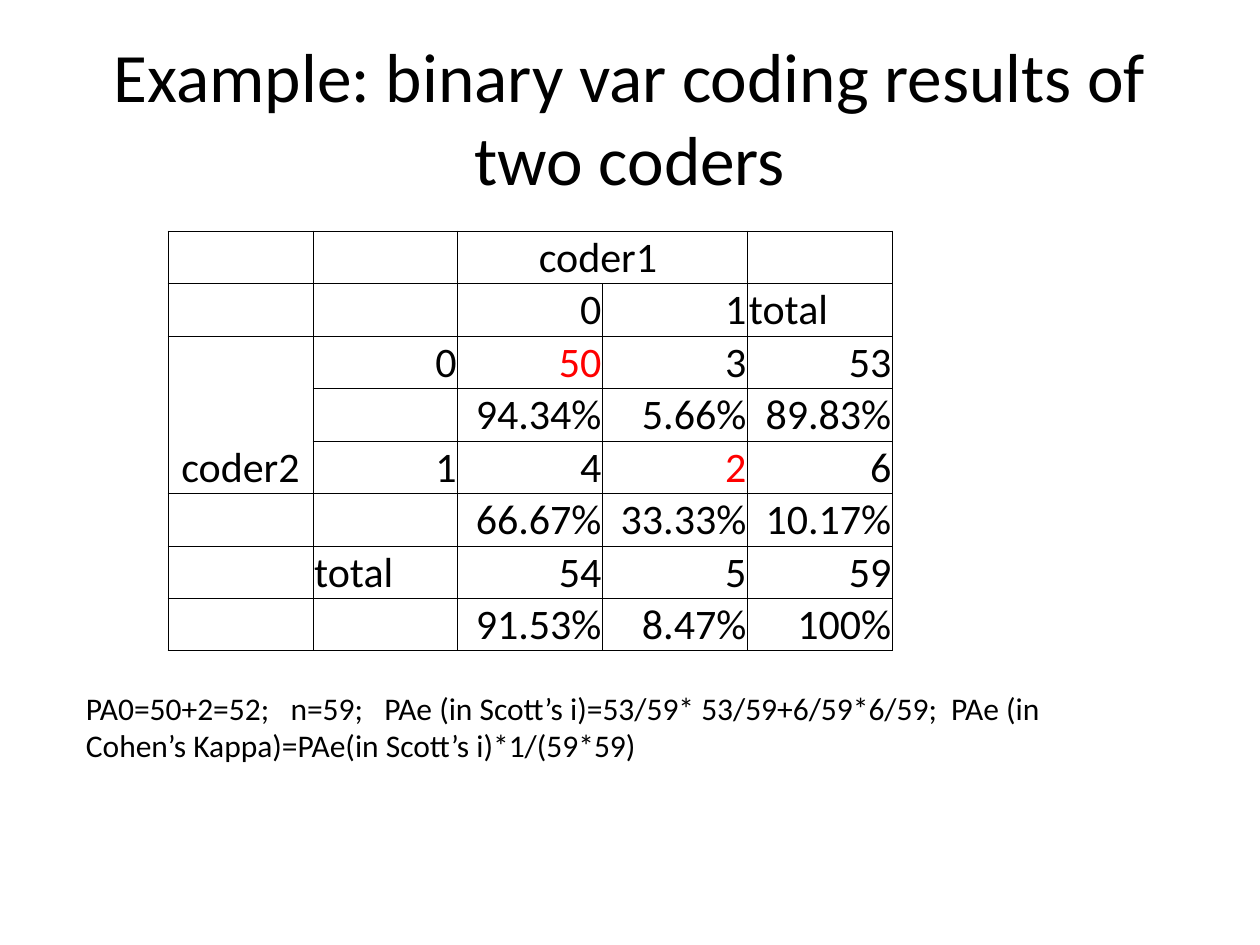
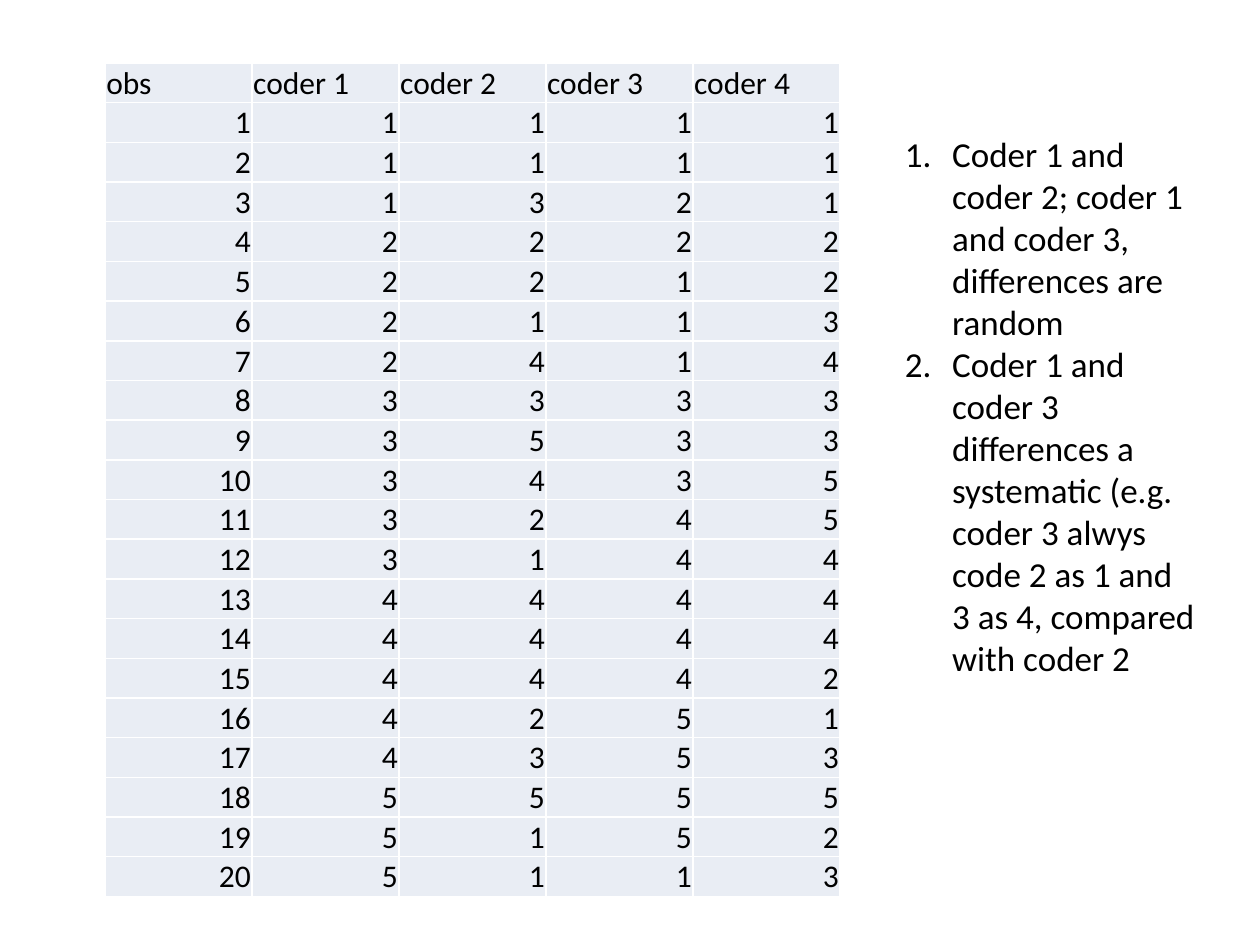
from dataclasses import dataclass

from lxml import etree
from pptx import Presentation
from pptx.dml.color import RGBColor
from pptx.enum.text import MSO_ANCHOR, PP_ALIGN
from pptx.oxml.ns import qn
from pptx.util import Pt

LEFT, CENTER, RIGHT = PP_ALIGN.LEFT, PP_ALIGN.CENTER, PP_ALIGN.RIGHT
TOP, MIDDLE, BOTTOM = MSO_ANCHOR.TOP, MSO_ANCHOR.MIDDLE, MSO_ANCHOR.BOTTOM


@dataclass(frozen=True)
class Theme:
    font: str = "Calibri"
    ink: str = "000000"
    agreement: str = "FF0000"
    paper: str = "FFFFFF"
    pale: str = "E9EDF4"
    title: float = 39.6
    crosstab: float = 24
    findings: float = 20
    body: float = 18


THEME = Theme()

TITLE = "Example: binary var coding results of two coders"
CROSSTAB = [
    ("", "", "coder1 ", "", ""),
    ("", "", "0", "1", "total"),
    ("coder2", "0", "50", "3", "53"),
    ("", "", "94.34%", "5.66%", "89.83%"),
    ("", "1", "4", "2", "6"),
    ("", "", "66.67%", "33.33%", "10.17%"),
    ("", "total", "54", "5", "59"),
    ("", "", "91.53%", "8.47%", "100%"),
]
CODER_SPANS = {(0, 2): (0, 3), (2, 0): (4, 0)}
AGREEMENTS = {(2, 2), (4, 3)}
FORMULAS = (
    "PA0=50+2=52;   n=59;   PAe (in Scott’s i)=53/59* 53/59+6/59*6/59;  "
    "PAe (in Cohen’s Kappa)=PAe(in Scott’s i)*1/(59*59)"
)

CODINGS = {
    "coder 1": (1, 1, 1, 2, 2, 2, 2, 3, 3, 3, 3, 3, 4, 4, 4, 4, 4, 5, 5, 5),
    "coder 2": (1, 1, 3, 2, 2, 1, 4, 3, 5, 4, 2, 1, 4, 4, 4, 2, 3, 5, 1, 1),
    "coder 3": (1, 1, 2, 2, 1, 1, 1, 3, 3, 3, 4, 4, 4, 4, 4, 5, 5, 5, 5, 1),
    "coder 4": (1, 1, 1, 2, 2, 3, 4, 3, 3, 5, 5, 4, 4, 4, 2, 1, 3, 5, 2, 3),
}
FINDINGS = [
    "Coder 1 and coder 2; coder 1 and coder 3, differences are random",
    "Coder 1 and coder 3 differences a systematic (e.g. coder 3 alwys code 2 "
    "as 1 and 3 as 4, compared with coder 2",
]


def style(paragraph, size, color=THEME.ink, align=LEFT):
    paragraph.alignment = align
    paragraph.font.name = THEME.font
    paragraph.font.size = Pt(size)
    paragraph.font.color.rgb = RGBColor.from_string(color)


def number(paragraph, indent):
    properties = paragraph._p.get_or_add_pPr()
    properties.set("marL", str(Pt(indent)))
    properties.set("indent", str(-Pt(indent)))
    numbering = etree.Element(qn("a:buAutoNum"), type="arabicPeriod")
    properties.insert(0, numbering)


def add_text(slide, box, lines, size, align=LEFT, anchor=TOP, indent=0):
    frame = slide.shapes.add_textbox(*map(Pt, box)).text_frame
    frame.word_wrap = True
    frame.vertical_anchor = anchor
    for index, line in enumerate(lines):
        paragraph = frame.add_paragraph() if index else frame.paragraphs[0]
        paragraph.text = line
        style(paragraph, size, align=align)
        if indent:
            number(paragraph, indent)


def add_borders(cell, color, width):
    properties = cell._tc.get_or_add_tcPr()
    for side in ("lnL", "lnR", "lnT", "lnB"):
        line = etree.SubElement(properties, qn(f"a:{side}"), w=str(Pt(width)))
        fill = etree.SubElement(line, qn("a:solidFill"))
        etree.SubElement(fill, qn("a:srgbClr"), val=color)


def add_grid(slide, rows, corner, cell_size, size, border, fill=None,
             spans=None, highlights=()):
    spans = spans or {}
    width, height = cell_size
    extent = (width * len(rows[0]), height * len(rows))
    grid = slide.shapes.add_table(
        len(rows), len(rows[0]), *map(Pt, corner + extent)).table
    grid.first_row = grid.horz_banding = False
    for column in grid.columns:
        column.width = Pt(width)
    for r, row in enumerate(rows):
        grid.rows[r].height = Pt(height)
        for c, value in enumerate(row):
            cell = grid.cell(r, c)
            cell.margin_left = cell.margin_right = cell.margin_top = Pt(0.72)
            cell.margin_bottom = 0
            cell.vertical_anchor = BOTTOM
            add_borders(cell, *border)
            if fill:
                cell.fill.solid()
                cell.fill.fore_color.rgb = RGBColor.from_string(fill)
            else:
                cell.fill.background()
            text = str(value)
            cell.text = text
            if (r, c) in spans:
                align = CENTER
            else:
                align = RIGHT if text[:1].isdigit() else LEFT
            color = THEME.agreement if (r, c) in highlights else THEME.ink
            style(cell.text_frame.paragraphs[0], size, color, align)
    for start, end in spans.items():
        grid.cell(*start).merge(grid.cell(*end))


def build_crosstab(slide):
    add_text(slide, (36, 21.6, 648, 90), [TITLE], THEME.title, CENTER, MIDDLE)
    add_grid(slide, CROSSTAB, (96, 132), (82.8, 30), THEME.crosstab,
             (THEME.ink, 0.5), spans=CODER_SPANS, highlights=AGREEMENTS)
    add_text(slide, (42, 390, 564, 72.7), [FORMULAS], THEME.body)


def build_codings(slide):
    observations = enumerate(zip(*CODINGS.values()), start=1)
    rows = [("obs", *CODINGS)] + [(obs, *codes) for obs, codes in observations]
    add_grid(slide, rows, (60, 36), (84, 22.7), THEME.body,
             (THEME.paper, 1), fill=THEME.pale)
    add_text(slide, (510, 72, 180, 322.5), FINDINGS, THEME.findings, indent=27)


def main():
    deck = Presentation()
    deck.slide_width, deck.slide_height = Pt(720), Pt(540)
    blank = deck.slide_layouts[6]
    for build in (build_crosstab, build_codings):
        build(deck.slides.add_slide(blank))
    deck.save("out.pptx")


if __name__ == "__main__":
    main()
